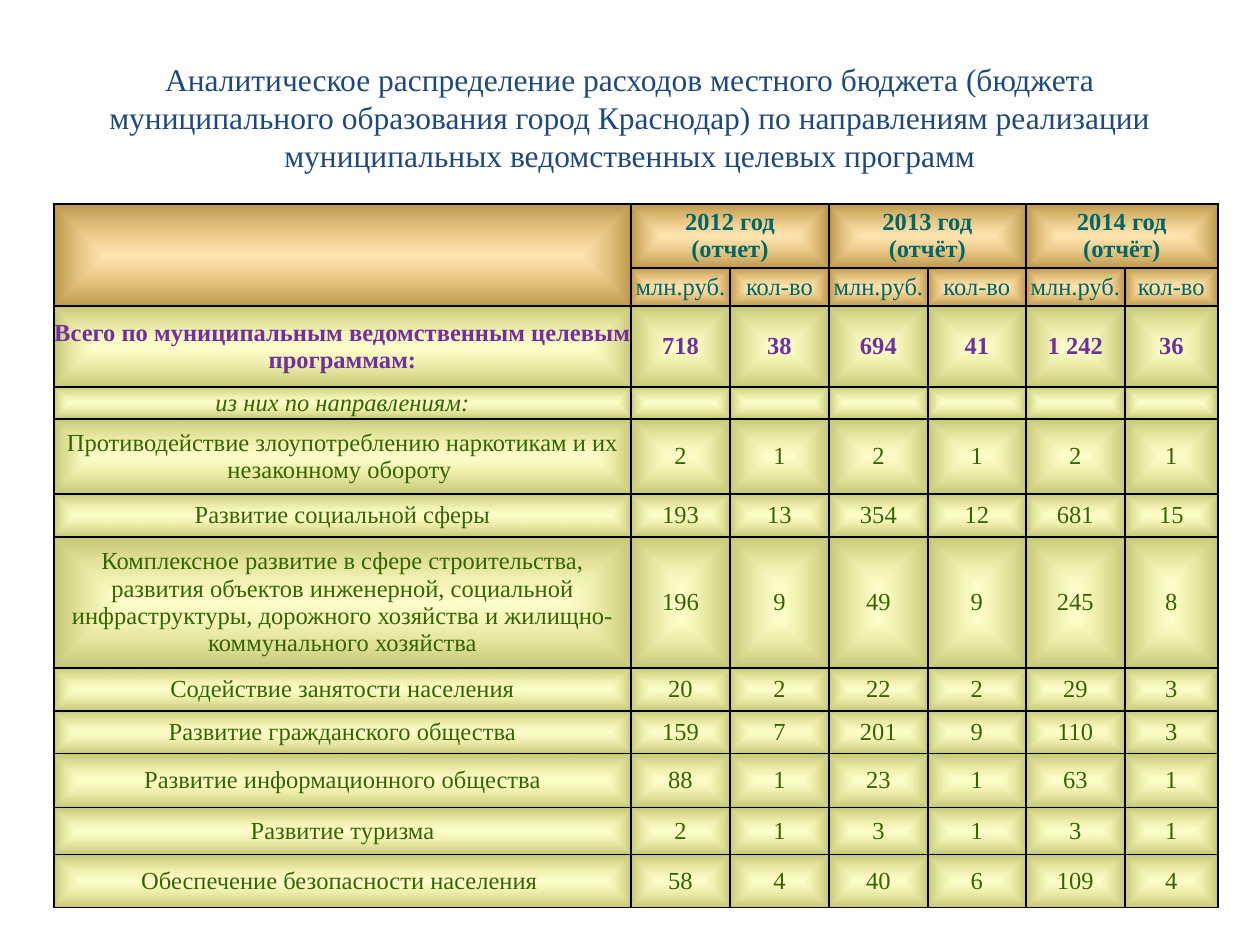
from lxml.etree import SubElement
from pptx import Presentation
from pptx.dml.color import RGBColor
from pptx.enum.text import MSO_ANCHOR as Anchor, PP_ALIGN as Align
from pptx.oxml import parse_xml
from pptx.oxml.ns import nsdecls, qn
from pptx.util import Emu, Pt

FONT = "Times New Roman"
NAVY, TEAL, PURPLE, GREEN = "1F497D", "006666", "7030A0", "336600"
GOLD_FILL = ("FFCC66", "BB964B")
YELLOW_FILL = ("FFFF99", "C6C677")

TITLE = ("Аналитическое распределение расходов местного бюджета (бюджета "
         "муниципального образования город Краснодар) по направлениям реализации "
         "муниципальных ведомственных целевых программ")
YEARS = ["2012 год\n(отчет)", "2013 год\n(отчёт)", "2014 год\n(отчёт)"]
UNITS = ["млн.руб.", "кол-во"]
TOTAL = ["Всего по муниципальным ведомственным целевым программам:",
         "718", "38", "694", "41", "1 242", "36"]
SUBHEAD = ["из них по направлениям:"] + [""] * 6
DIRECTIONS = [
    ["Противодействие злоупотреблению наркотикам и их незаконному обороту ",
     2, 1, 2, 1, 2, 1],
    ["Развитие социальной сферы", 193, 13, 354, 12, 681, 15],
    ["Комплексное развитие в сфере строительства, развития объектов инженерной, "
     "социальной инфраструктуры, дорожного хозяйства и жилищно-коммунального хозяйства",
     196, 9, 49, 9, 245, 8],
    ["Содействие занятости населения", 20, 2, 22, 2, 29, 3],
    ["Развитие гражданского общества", 159, 7, 201, 9, 110, 3],
    ["Развитие информационного общества", 88, 1, 23, 1, 63, 1],
    ["Развитие туризма", 2, 1, 3, 1, 3, 1],
    ["Обеспечение безопасности населения ", 58, 4, 40, 6, 109, 4],
]
COLUMN_WIDTHS = [577, 99, 99, 99, 98, 99, 93]
ROW_HEIGHTS = [64, 38, 81, 32, 75, 43, 131, 43, 43, 54, 47, 53]


def px(length):
    return Emu(round(length * 914400 / 126))


def color(hex_value):
    return RGBColor.from_string(hex_value)


def style_paragraph(paragraph, size, hex_value, bold=False, italic=False):
    paragraph.alignment = Align.CENTER
    font = paragraph.font
    font.name, font.size, font.bold, font.italic = FONT, Pt(size), bold, italic
    font.color.rgb = color(hex_value)


def paint_cell(cell, fill):
    """Black borders, then a half-transparent centre fading to a darker edge."""
    center, edge = fill
    properties = cell._tc.get_or_add_tcPr()
    for side in ("lnL", "lnR", "lnT", "lnB"):
        properties.append(parse_xml(
            f'<a:{side} {nsdecls("a")} w="{Pt(1)}"><a:solidFill>'
            f'<a:srgbClr val="000000"/></a:solidFill></a:{side}>'))
    properties.append(parse_xml(
        f'<a:gradFill {nsdecls("a")} rotWithShape="1"><a:gsLst>'
        f'<a:gs pos="0"><a:srgbClr val="{center}"><a:alpha val="50000"/></a:srgbClr></a:gs>'
        f'<a:gs pos="100000"><a:srgbClr val="{edge}"/></a:gs></a:gsLst>'
        '<a:path path="shape"><a:fillToRect l="50000" t="50000" r="50000" b="50000"/>'
        '</a:path></a:gradFill>'))


def fill_cell(cell, text, fill, hex_value, bold=False, italic=False):
    cell.margin_left = cell.margin_right = cell.margin_top = cell.margin_bottom = 0
    cell.vertical_anchor = Anchor.MIDDLE
    cell.text = str(text)
    for paragraph in cell.text_frame.paragraphs:
        style_paragraph(paragraph, 14, hex_value, bold, italic)
        if not paragraph.text:  # keeps the line of an empty cell low
            SubElement(paragraph._p, qn("a:endParaRPr"), sz="1400")
    paint_cell(cell, fill)


def add_title(slide, left, top, width, height):
    frame = slide.shapes.add_textbox(px(left), px(top), px(width), px(height)).text_frame
    frame.word_wrap = True
    frame.vertical_anchor = Anchor.MIDDLE
    frame.text = TITLE
    style_paragraph(frame.paragraphs[0], 18, NAVY)


def add_budget_table(slide, left, top):
    table = slide.shapes.add_table(
        len(ROW_HEIGHTS), len(COLUMN_WIDTHS), px(left), px(top),
        px(sum(COLUMN_WIDTHS)), px(sum(ROW_HEIGHTS))).table
    table.first_row = table.horz_banding = False
    for column, width in zip(table.columns, COLUMN_WIDTHS):
        column.width = px(width)
    for row, height in zip(table.rows, ROW_HEIGHTS):
        row.height = px(height)

    # Header: each year spans its two units
    year_row = [""] + [text for year in YEARS for text in (year, "")]
    unit_row = [""] + UNITS * len(YEARS)
    rows = [(year_row, GOLD_FILL, TEAL, True, False),
            (unit_row, GOLD_FILL, TEAL, False, False),
            (TOTAL, YELLOW_FILL, PURPLE, True, False),
            (SUBHEAD, YELLOW_FILL, GREEN, False, True)]
    rows += [(values, YELLOW_FILL, GREEN, False, False) for values in DIRECTIONS]
    for row_index, (values, *style) in enumerate(rows):
        for column_index, value in enumerate(values):
            fill_cell(table.cell(row_index, column_index), value, *style)

    table.cell(0, 0).merge(table.cell(1, 0))
    for first in range(1, len(COLUMN_WIDTHS), len(UNITS)):
        table.cell(0, first).merge(table.cell(0, first + 1))


def main():
    deck = Presentation()
    deck.slide_width, deck.slide_height = px(1260), px(945)
    slide = deck.slides.add_slide(deck.slide_layouts[6])
    add_title(slide, 63, 38, 1134, 158)
    add_budget_table(slide, 54, 204)
    deck.save("out.pptx")


if __name__ == "__main__":
    main()
